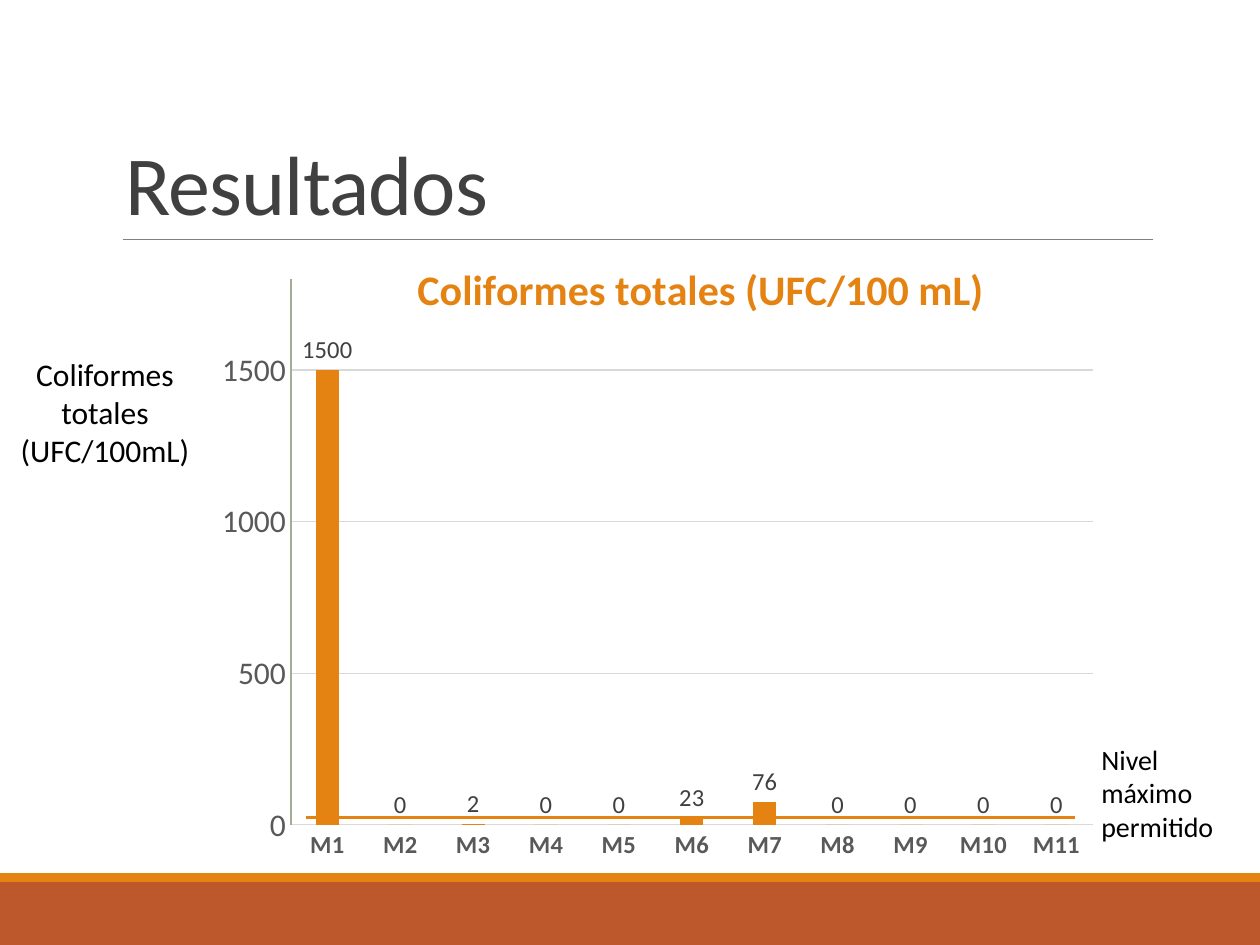
from lxml import etree
from pptx import Presentation
from pptx.chart.data import CategoryChartData
from pptx.dml.color import RGBColor
from pptx.enum.chart import XL_CHART_TYPE, XL_LABEL_POSITION, XL_TICK_MARK
from pptx.enum.shapes import MSO_CONNECTOR, MSO_SHAPE
from pptx.enum.text import MSO_ANCHOR, PP_ALIGN
from pptx.oxml.ns import qn
from pptx.util import Pt

COLUMNS = XL_CHART_TYPE.COLUMN_CLUSTERED
OUTSIDE_END = XL_LABEL_POSITION.OUTSIDE_END
NO_TICK = XL_TICK_MARK.NONE
STRAIGHT = MSO_CONNECTOR.STRAIGHT
RECTANGLE = MSO_SHAPE.RECTANGLE
TOP, BOTTOM = MSO_ANCHOR.TOP, MSO_ANCHOR.BOTTOM
LEFT, CENTER = PP_ALIGN.LEFT, PP_ALIGN.CENTER

EMU_PER_PX = 914400 / 126
FONT = "Calibri"
ORANGE, RUST, GRAY = "E48312", "BD582C", "595959"
CHART_TITLE = "Coliformes totales (UFC/100 mL)"
COUNTS = [1500, 0, 2, 0, 0, 23, 76, 0, 0, 0, 0]


def px(length):
    return round(length * EMU_PER_PX)


def box_px(*lengths):
    return [px(length) for length in lengths]


def color(hex_string):
    return RGBColor.from_string(hex_string)


def style_font(font, size, hex_string, bold=False):
    font.name = FONT
    font.size = Pt(size)
    font.bold = bold
    font.color.rgb = color(hex_string)


def style_line(line, hex_string, width):
    line.color.rgb = color(hex_string)
    line.width = Pt(width)


def add_band(slide, box, hex_string):
    band = slide.shapes.add_shape(RECTANGLE, *box_px(*box))
    band.shadow.inherit = False
    band.fill.solid()
    band.fill.fore_color.rgb = color(hex_string)
    band.line.fill.background()


def add_rule(slide, left, right, y, hex_string, width):
    rule = slide.shapes.add_connector(STRAIGHT, *box_px(left, y, right, y))
    style_line(rule.line, hex_string, width)
    etree.SubElement(rule._element.spPr, qn("a:effectLst"))


def add_text(slide, box, text, size, hex_string="000000", align=LEFT, anchor=TOP):
    text_frame = slide.shapes.add_textbox(*box_px(*box)).text_frame
    text_frame.word_wrap = True
    text_frame.vertical_anchor = anchor
    text_frame.text = text
    paragraph = text_frame.paragraphs[0]
    paragraph.alignment = align
    style_font(paragraph.runs[0].font, size, hex_string)
    return paragraph


def set_layout(parent, index, **values):
    """Place a chart part by fractions of the chart box."""
    for old_layout in parent.findall(qn("c:layout")):
        parent.remove(old_layout)
    layout = etree.Element(qn("c:layout"))
    parent.insert(index, layout)
    manual = etree.SubElement(layout, qn("c:manualLayout"))
    if "w" in values:
        etree.SubElement(manual, qn("c:layoutTarget")).set("val", "inner")
    for name in ("xMode", "yMode"):
        etree.SubElement(manual, qn(f"c:{name}")).set("val", "edge")
    for name, value in values.items():
        etree.SubElement(manual, qn(f"c:{name}")).set("val", f"{value:.4f}")


def style_axis(axis, size, line_color, bold=False):
    axis.major_tick_mark = axis.minor_tick_mark = NO_TICK
    style_font(axis.tick_labels.font, size, GRAY, bold)
    style_line(axis.format.line, line_color, 0.75)


def add_coliform_chart(slide, box):
    width, height = box[2:]
    data = CategoryChartData()
    data.categories = [f"M{number}" for number in range(1, len(COUNTS) + 1)]
    data.add_series(CHART_TITLE, COUNTS)
    chart = slide.shapes.add_chart(COLUMNS, *box_px(*box), data).chart
    style_font(chart.font, 10, "000000")
    chart.has_legend = False

    # Title
    chart.has_title = True
    title = chart.chart_title
    title.text_frame.text = CHART_TITLE
    style_font(title.text_frame.paragraphs[0].runs[0].font, 24, ORANGE, bold=True)
    set_layout(title._element, 1, x=206 / width, y=86 / height)

    # Columns and their values
    plot = chart.plots[0]
    plot.gap_width, plot.overlap = 215, -32
    plot.vary_by_categories = False
    series = plot.series[0]
    series.format.fill.solid()
    series.format.fill.fore_color.rgb = color(ORANGE)
    labels = series.data_labels
    labels.show_value = True
    labels.position = OUTSIDE_END
    style_font(labels.font, 14, "404040")
    plot_area = chart._chartSpace.chart.plotArea
    set_layout(plot_area, 0, x=87 / width, y=111 / height,
               w=802 / width, h=546 / height)

    # Axes
    style_axis(chart.category_axis, 14, "D9D9D9", bold=True)
    value_axis = chart.value_axis
    style_axis(value_axis, 18, "A2AF92")
    value_axis.minimum_scale, value_axis.maximum_scale = 0, 1800
    value_axis.major_unit = 500
    style_line(value_axis.major_gridlines.format.line, "D9D9D9", 0.75)


def add_footer(slide, left, top, width, height):
    stripe = 9
    add_band(slide, (left, top + stripe, width, height - stripe), RUST)
    add_band(slide, (left, top, width, stripe), ORANGE)


def add_heading(slide, left, top, width, height):
    add_rule(slide, left + 10, left + width, top + height, "808080", 0.5)
    heading = add_text(slide, (left, top, width, height), "Resultados", 48,
                       "404040", anchor=BOTTOM)
    heading.line_spacing = 0.85
    heading.runs[0].font._element.set("spc", "-50")


def add_results(slide, left, top, width, height):
    add_text(slide, (left + 1089, top + 568, 151, 115),
             "Nivel máximo permitido", 16)
    add_text(slide, (left, top + 181, 210, 127),
             "Coliformes totales (UFC/100mL)", 18, align=CENTER)
    add_coliform_chart(slide, (left + 204, top, width - 204, height))
    # Highest permitted level
    add_rule(slide, left + 306, left + 1075, top + 650, ORANGE, 1.75)


def main():
    presentation = Presentation()
    presentation.slide_width, presentation.slide_height = box_px(1260, 945)
    slide = presentation.slides.add_slide(presentation.slide_layouts[6])
    add_footer(slide, 0, 873, 1260, 72)
    add_heading(slide, 113, 39, 1040, 200)
    add_results(slide, 0, 168, 1111, 707)
    presentation.save("out.pptx")


if __name__ == "__main__":
    main()
